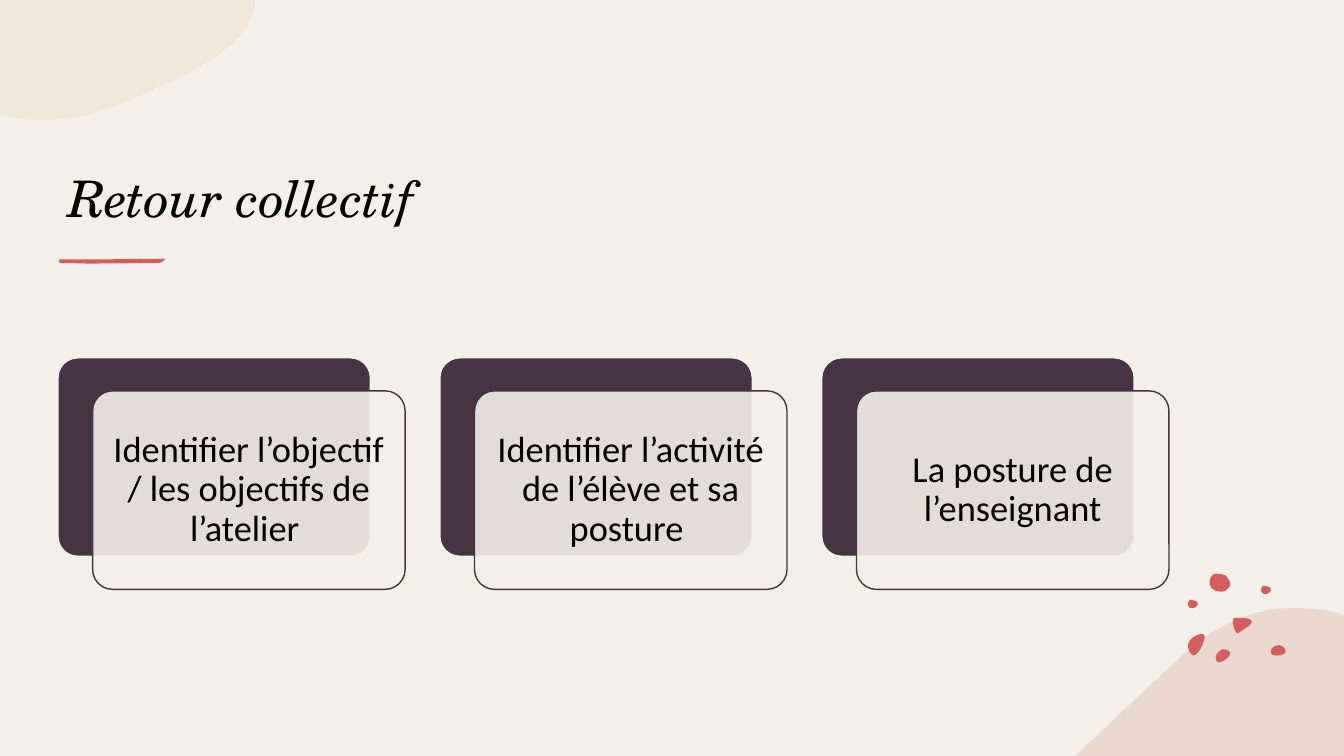
from lxml.etree import SubElement
from pptx import Presentation
from pptx.dml.color import RGBColor
from pptx.enum.shapes import MSO_SHAPE
from pptx.enum.text import MSO_ANCHOR, MSO_AUTO_SIZE, PP_ALIGN
from pptx.oxml.ns import qn
from pptx.util import Pt

COLORS = {
    "paper": "F3F0E9", "ink": "000000", "plum": "463443",
    "red": "D45E5E", "sand": "E7CFAF", "rose": "E5C4BA",
}

# Outlines in points: a start, then lines (x, y) or curves (two controls, end)
SAND_BLOB = [
    (0, 0), (182.2, 0), (182.2, 4.3),
    (176.4, 31.7, 144, 48.2, 113.8, 61.9), (88.6, 74.2, 61.9, 85.7, 29.5, 85.7),
    (22.3, 85.7, 15.8, 85, 9.4, 83.5), (0, 82.1),
]
ROSE_BLOB = [
    (927.4, 434.2), (936.7, 434.9, 946.1, 435.6, 955.4, 437.8),
    (960, 439.2), (960, 540), (768, 540), (769, 539.3),
    (793.4, 515.5, 818.6, 492.5, 841.7, 470.9),
    (857.5, 455, 874.1, 445.7, 890.6, 439.9),
    (902.9, 435.6, 915.1, 434.2, 927.4, 434.2),
]
UNDERLINE = [
    (42.5, 185.3), (80, 185.2), (118, 184.8),
    (115.9, 185.8, 117.4, 187.9, 113, 187.9), (64, 188.3), (44, 187.9),
    (41.8, 188.3, 41.8, 185.8, 42.5, 185.3),
]
PEBBLE = [
    (900.7, 421.9), (900.7, 421.9, 900.7, 419, 902.2, 418.3),
    (903.6, 418.3, 904.3, 418.3, 905.8, 419), (906.5, 419, 907.9, 419.8, 907.9, 421.2),
    (907.9, 421.9, 907.2, 422.6, 906.5, 423.4), (906.5, 423.4, 906.5, 424.1, 905, 424.1),
    (904.3, 424.1, 902.9, 424.8, 902.2, 424.1), (901.4, 422.6, 900.7, 422.6, 900.7, 421.9),
]
SPOTS = [
    [(873.4, 463.7), (874.8, 463.7, 875.5, 463.7, 877, 464.4),
     (878.4, 465.1, 879.1, 466.6, 878.4, 468), (877, 470.2, 872.6, 473.8, 869.8, 473),
     (869, 472.3, 868.3, 470.9, 868.3, 469.4), (868.3, 468, 869.8, 465.8, 871.2, 465.1),
     (871.9, 464.4, 872.6, 463.7, 873.4, 463.7)],
    [(857.5, 452.9), (859, 452.9, 860.4, 452.9, 860.4, 454.3),
     (860.4, 455, 860.4, 455, 860.4, 455.8),
     (859.7, 459.4, 858.2, 463, 856.1, 465.8), (854.6, 467.3, 852.5, 469.4, 851, 467.3),
     (848.9, 465.1, 848.2, 461.5, 848.9, 459.4), (849.6, 457.2, 851, 456.5, 852.5, 455),
     (853.2, 455, 855.4, 452.9, 857.5, 452.9)],
    [(913.7, 460.8), (915.1, 460.8, 917.3, 462.2, 918, 463.7),
     (918.7, 465.1, 918.7, 466.6, 916.6, 467.3), (914.4, 468.7, 908.6, 468.7, 907.9, 466.6),
     (907.2, 465.1, 907.9, 463.7, 908.6, 463), (910.1, 461.5, 911.5, 460.8, 913.7, 460.8)],
    [(864.7, 418.3), (864, 418.3, 863.3, 414, 865.4, 411.8),
     (866.9, 410.4, 866.9, 409.7, 869, 409.7), (871.2, 409.7, 874.1, 410.4, 875.5, 411.1),
     (877, 412.6, 879.8, 416.2, 878.4, 419), (876.2, 421.2, 875.5, 422.6, 872.6, 422.6),
     (870.5, 422.6, 866.9, 421.9, 866.2, 420.5), (864.7, 419.8, 864.7, 419, 864.7, 418.3)],
    [(884.2, 441.4), (888.5, 441.4, 896.4, 441.4, 893.5, 445.7),
     (893.5, 446.4, 892.8, 447.1, 892.1, 447.1), (889.9, 448.6, 887.8, 450, 885.6, 451.4),
     (884.9, 452.2, 884.2, 452.9, 883.4, 452.2), (883.4, 452.2, 882.7, 451.4, 882.7, 451.4),
     (881.3, 448.6, 880.6, 446.4, 880.6, 443.5), (880.6, 442.8, 880.6, 442.1, 881.3, 441.4),
     (881.3, 441.4, 882, 441.4, 882, 441.4), (882.7, 441.4, 883.4, 441.4, 884.2, 441.4)],
]


def paint(shape, color, opacity=100, border=None):
    shape.shadow.inherit = False
    shape.fill.solid()
    shape.fill.fore_color.rgb = RGBColor.from_string(COLORS[color])
    if opacity < 100:
        tint = shape.element.spPr.find(qn("a:solidFill"))[0]
        SubElement(tint, qn("a:alpha"), val=str(opacity * 1000))
    if border:
        shape.line.color.rgb = RGBColor.from_string(COLORS[border])
        shape.line.width = Pt(1)
    else:
        shape.line.fill.background()


def draw_outline(outline, color, opacity=100, dx=0, dy=0):
    points = [(Pt(segment[i] + dx), Pt(segment[i + 1] + dy))
              for segment in outline for i in range(0, len(segment), 2)]
    builder = slide.shapes.build_freeform(*points[0])
    builder.add_line_segments(points[1:], close=True)
    shape = builder.convert_to_shape()
    # Join each two controls and their end into one curve
    steps = iter(list(shape.element.spPr.iter(qn("a:lnTo"))))
    for segment in outline[1:]:
        step = next(steps)
        if len(segment) == 6:
            step.tag = qn("a:cubicBezTo")
            for following in (next(steps), next(steps)):
                step.append(following[0])
                following.getparent().remove(following)
    paint(shape, color, opacity)


prs = Presentation()
prs.slide_width, prs.slide_height = Pt(960), Pt(540)
slide = prs.slides.add_slide(prs.slide_layouts[5])
slide.background.fill.solid()
slide.background.fill.fore_color.rgb = RGBColor.from_string(COLORS["paper"])

# Paper panel and corner blob
paper = slide.shapes.add_shape(MSO_SHAPE.RECTANGLE, Pt(0), Pt(0), Pt(960), Pt(540))
paint(paper, "paper")
draw_outline(SAND_BLOB, "sand", 25)

# Title
title = slide.shapes.title
title.left, title.top, title.width, title.height = Pt(41.4), Pt(62), Pt(793.4), Pt(104.4)
slide.shapes.element.append(title.element)
heading = title.text_frame
heading.auto_size = MSO_AUTO_SIZE.NONE
heading.vertical_anchor = MSO_ANCHOR.BOTTOM
heading.paragraphs[0].alignment = PP_ALIGN.LEFT
heading_run = heading.paragraphs[0].add_run()
heading_run.text = "Retour collectif"
heading_run.font.name = "TeX Gyre Schola"
heading_run.font.size = Pt(36)
heading_run.font.italic = True
heading_run.font.color.rgb = RGBColor.from_string(COLORS["ink"])

# Title underline and corner decoration
draw_outline(UNDERLINE, "red")
draw_outline(ROSE_BLOB, "rose", 50)
for spot in SPOTS:
    draw_outline(spot, "red")
for dx, dy in [(0, 0), (-52.2, 10.1)]:
    draw_outline(PEBBLE, "red", dx=dx, dy=dy)

# Cards: a plum back and a translucent front with the text
TOPICS = [
    "Identifier l’objectif / les objectifs de l’atelier ",
    "Identifier l’activité de l’élève et sa posture ",
    "La posture de l’enseignant",
]
for index, topic in enumerate(TOPICS):
    left = 41.4 + 272.8 * index
    for shift_x, shift_y, color, opacity, border in [
        (0, 0, "plum", 100, "paper"), (24.8, 23.6, "paper", 90, "plum"),
    ]:
        card = slide.shapes.add_shape(
            MSO_SHAPE.ROUNDED_RECTANGLE,
            Pt(left + shift_x), Pt(255.6 + shift_y), Pt(223.2), Pt(141.8))
        card.adjustments[0] = 0.1
        paint(card, color, opacity, border)
    frame = card.text_frame
    frame.word_wrap = True
    frame.vertical_anchor = MSO_ANCHOR.MIDDLE
    frame.margin_left = frame.margin_right = frame.margin_top = frame.margin_bottom = Pt(7.9)
    paragraph = frame.paragraphs[0]
    paragraph.alignment = PP_ALIGN.CENTER
    paragraph.line_spacing = 0.9
    run = paragraph.add_run()
    run.text = topic
    run.font.name = "Calibri"
    run.font.size = Pt(26)
    run.font.color.rgb = RGBColor.from_string(COLORS["ink"])

prs.save("out.pptx")
